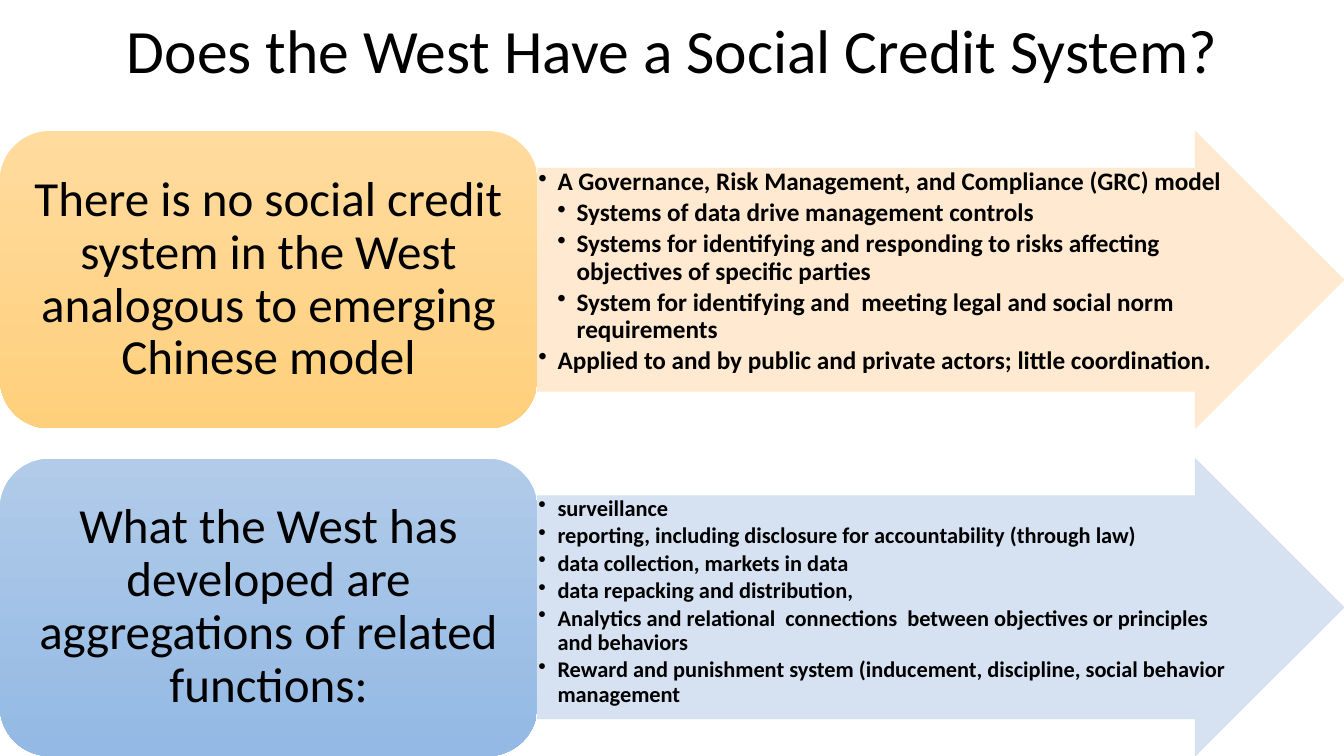
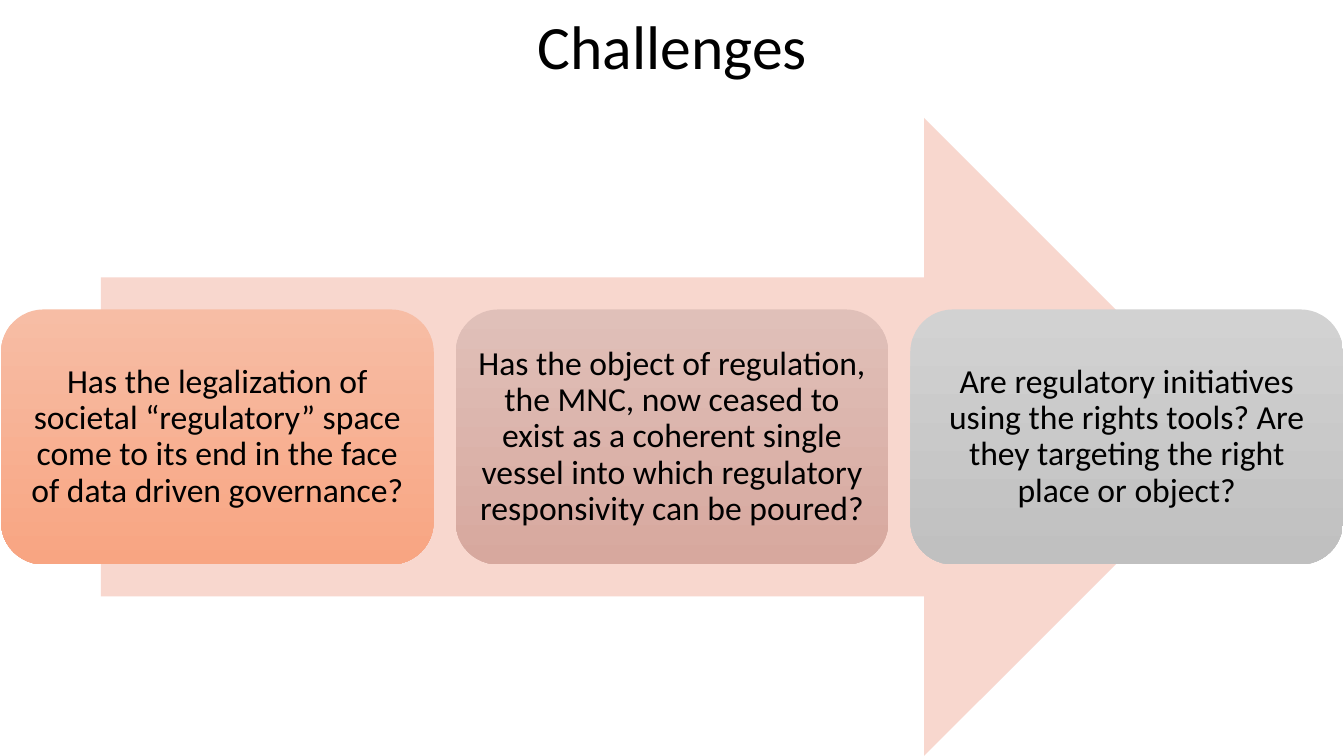
from lxml.etree import SubElement
from pptx import Presentation
from pptx.dml.color import RGBColor
from pptx.enum.shapes import MSO_SHAPE
from pptx.enum.text import MSO_ANCHOR, MSO_AUTO_SIZE, PP_ALIGN
from pptx.oxml.ns import qn
from pptx.util import Inches, Pt

FONT = "Calibri"
BLACK = RGBColor(0x00, 0x00, 0x00)
PALE_ORANGE = RGBColor(0xFF, 0xE8, 0xCC)
PALE_BLUE = RGBColor(0xD2, 0xDF, 0xF0)
PALE_CORAL = RGBColor(0xF8, 0xD7, 0xCE)
ORANGE = (RGBColor(0xFF, 0xDB, 0x9E), RGBColor(0xFF, 0xD0, 0x7C))
BLUE = (RGBColor(0xB1, 0xCB, 0xE9), RGBColor(0x93, 0xB9, 0xE4))
CORAL = (RGBColor(0xF7, 0xBD, 0xA5), RGBColor(0xF8, 0xA5, 0x82))
ROSE = (RGBColor(0xE0, 0xC0, 0xB9), RGBColor(0xD7, 0xA8, 0x9E))
GRAY = (RGBColor(0xD2, 0xD2, 0xD2), RGBColor(0xC0, 0xC0, 0xC0))

POSITIONS = [
    ("There is no social credit system in the West analogous to emerging Chinese model",
     ORANGE, PALE_ORANGE, 18, [
         (1, "A Governance, Risk Management, and Compliance (GRC) model"),
         (2, "Systems of data drive management controls"),
         (2, "Systems for identifying and responding to risks affecting objectives of specific parties"),
         (2, "System for identifying and  meeting legal and social norm requirements"),
         (1, "Applied to and by public and private actors; little coordination."),
     ]),
    ("What the West has developed are aggregations of related functions:",
     BLUE, PALE_BLUE, 16, [
         (1, "surveillance"),
         (1, "reporting, including disclosure for accountability (through law)"),
         (1, "data collection, markets in data"),
         (1, "data repacking and distribution,"),
         (1, "Analytics and relational  connections  between objectives or principles and behaviors"),
         (1, "Reward and punishment system (inducement, discipline, social behavior management"),
     ]),
]
CHALLENGES = [
    ("Has the legalization of societal “regulatory” space come to its end in the face "
     "of data driven governance?", CORAL),
    ("Has the object of regulation, the MNC, now ceased to exist as a coherent single "
     "vessel into which regulatory responsivity can be poured?", ROSE),
    ("Are regulatory initiatives using the rights tools? Are they targeting the right "
     "place or object?", GRAY),
]


class Deck:
    """Hold the shared style and the slide being built."""

    def __init__(self):
        """Start an empty widescreen presentation."""
        self.presentation = Presentation()
        self.presentation.slide_width = Inches(13.33)
        self.presentation.slide_height = Inches(7.5)
        self.slide = None

    def add_slide(self, title, title_height):
        """Add a slide with a centred title across the top."""
        self.slide = self.presentation.slides.add_slide(self.presentation.slide_layouts[5])
        heading = self.slide.shapes.title
        heading.left, heading.top = Inches(0.92), Inches(0)
        heading.width, heading.height = Inches(11.5), Inches(title_height)
        frame = heading.text_frame
        frame.text = title
        frame.auto_size = MSO_AUTO_SIZE.NONE
        frame.vertical_anchor = MSO_ANCHOR.MIDDLE
        self.style(frame.paragraphs[0], 44, PP_ALIGN.CENTER)

    def style(self, paragraph, size, alignment, bold=False):
        """Apply the common text style to a paragraph."""
        paragraph.alignment = alignment
        paragraph.line_spacing = 0.9
        font = paragraph.font
        font.name, font.size, font.bold = FONT, Pt(size), bold
        font.color.rgb = BLACK

    def add_block(self, preset, left, top, width, height):
        """Add a preset shape without shadow or outline."""
        block = self.slide.shapes.add_shape(
            preset, Inches(left), Inches(top), Inches(width), Inches(height))
        block.shadow.inherit = False
        block.line.fill.background()
        return block

    def prepare_text(self, block, anchor, side, edge):
        """Set anchor, wrapping and margins, and return the text frame."""
        frame = block.text_frame
        frame.word_wrap = True
        frame.vertical_anchor = anchor
        frame.margin_left = frame.margin_right = Inches(side)
        frame.margin_top = frame.margin_bottom = Inches(edge)
        return frame

    def add_arrow(self, left, top, width, height, color):
        """Add a plain right arrow."""
        arrow = self.add_block(MSO_SHAPE.RIGHT_ARROW, left, top, width, height)
        arrow.fill.solid()
        arrow.fill.fore_color.rgb = color
        return arrow

    def add_list_arrow(self, left, top, width, height, color, size, items):
        """Add a translucent arrow that carries a bulleted list."""
        arrow = self.add_arrow(left, top, width, height, color)
        arrow.adjustments[0] = 0.75
        arrow.line.color.rgb = color
        arrow.line.width = Pt(0.5)
        for tint in arrow.element.spPr.iter(qn("a:srgbClr")):
            SubElement(tint, qn("a:alpha"), val="90000")
        frame = self.prepare_text(arrow, MSO_ANCHOR.TOP, 0.01, 0.01)
        frame.text = "\n".join(wording for _, wording in items)
        for paragraph, (level, _) in zip(frame.paragraphs, items):
            paragraph.level = level
            properties = paragraph._p.get_or_add_pPr()
            properties.set("marL", str(Inches(0.19 * level)))
            properties.set("indent", str(-Inches(0.19)))
            SubElement(properties, qn("a:buChar"), char="•")
            paragraph.space_after = Pt(round(size * 0.15, 1))
            self.style(paragraph, size, PP_ALIGN.LEFT, bold=True)

    def add_card(self, left, top, width, height, shades, wording, size, side, edge):
        """Add a rounded card with a vertical gradient and centred text."""
        card = self.add_block(MSO_SHAPE.ROUNDED_RECTANGLE, left, top, width, height)
        card.fill.gradient()
        card.fill.gradient_angle = 270
        for stop, shade in zip(card.fill.gradient_stops, shades):
            stop.color.rgb = shade
        frame = self.prepare_text(card, MSO_ANCHOR.MIDDLE, side, edge)
        frame.text = wording
        self.style(frame.paragraphs[0], size, PP_ALIGN.CENTER)


def main():
    """Build both slides and save them."""
    deck = Deck()

    deck.add_slide("Does the West Have a Social Credit System?", 1.07)
    for row, (claim, shades, pale, size, items) in enumerate(POSITIONS):
        top = 1.3 + 3.25 * row
        deck.add_list_arrow(5.33, top, 8, 2.95, pale, size, items)
        deck.add_card(0, top, 5.33, 2.95, shades, claim, 35, 0.15, 0.07)

    deck.add_slide("Challenges", 0.98)
    deck.add_arrow(1, 1.17, 11.33, 6.33, PALE_CORAL)
    for column, (question, shades) in enumerate(CHALLENGES):
        deck.add_card(0.01 + 4.51 * column, 3.07, 4.29, 2.53, shades, question, 24, 0.1, 0.1)

    deck.presentation.save("out.pptx")


if __name__ == "__main__":
    main()
